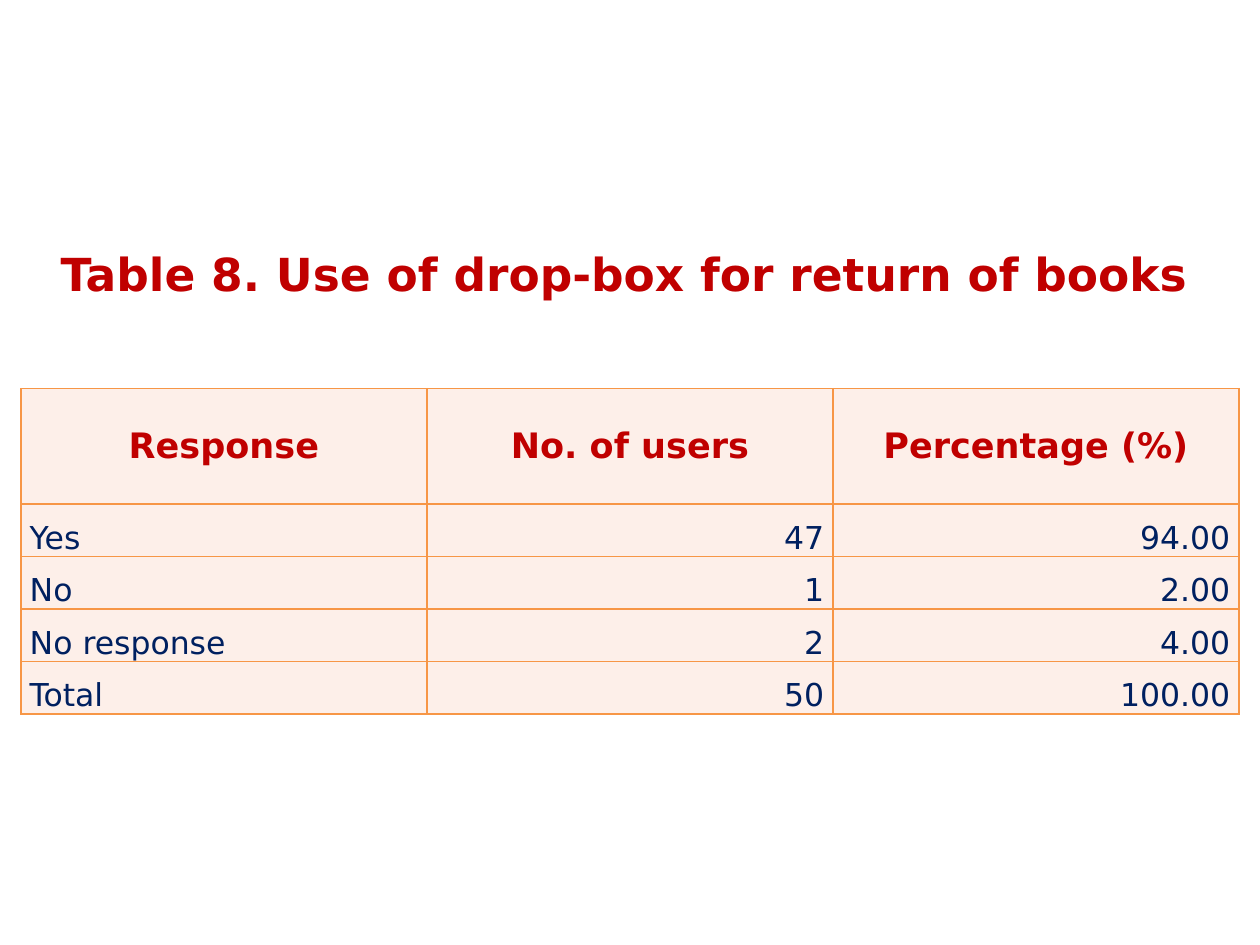
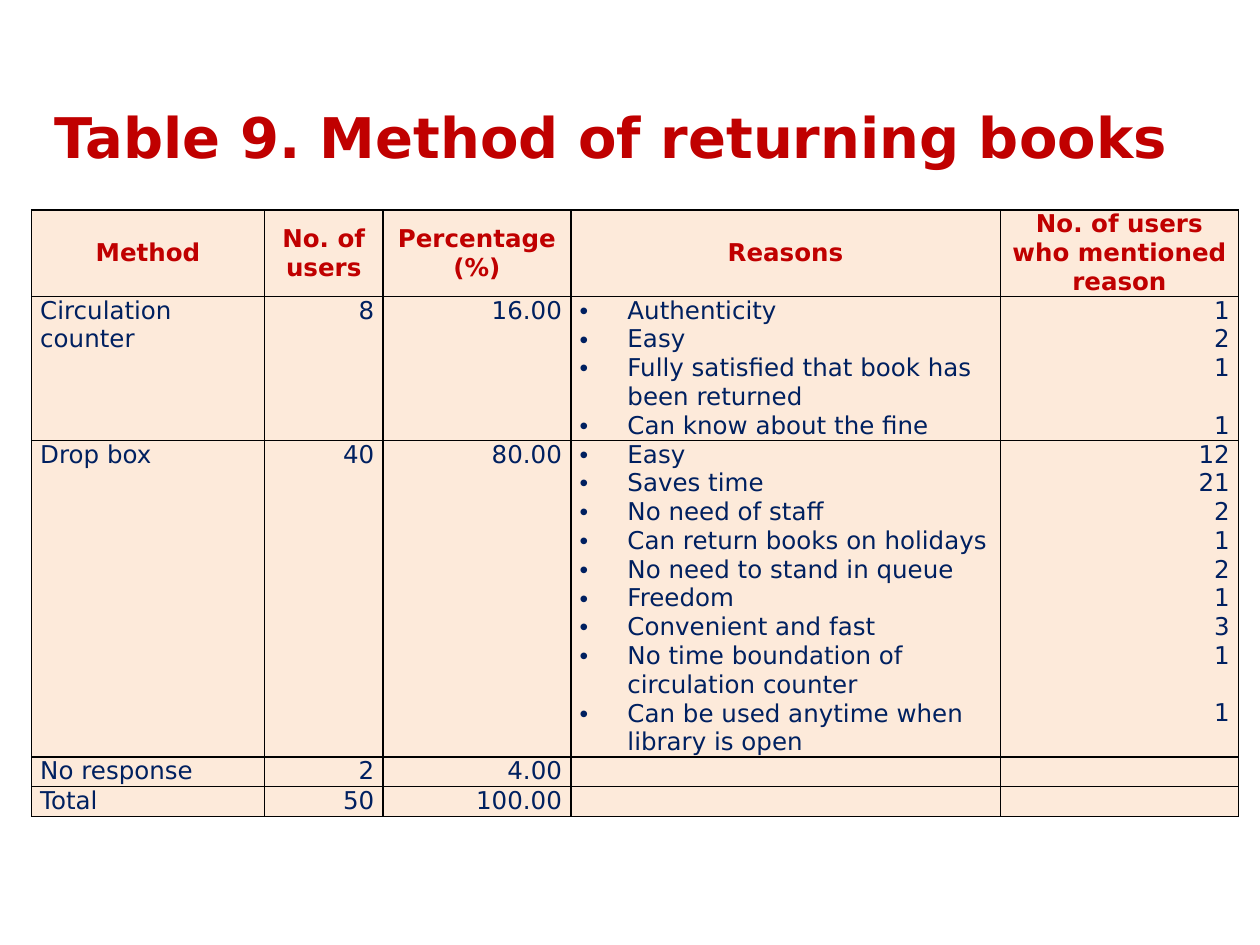
"""Build two slides of survey tables about returning library books."""
import lxml.etree
import pptx
import pptx.dml.color
import pptx.enum.text
import pptx.oxml.ns
import pptx.util

Pt = pptx.util.Pt
qn = pptx.oxml.ns.qn
ALIGN = pptx.enum.text.PP_ALIGN
ANCHOR = pptx.enum.text.MSO_ANCHOR

FONT = "DejaVu Sans"
RED, NAVY = "C00000", "002060"
LINE = 16.4
INDENT = 27.4
WRAP_LENGTH = 30

COUNTER_REASONS = [
    ("Authenticity", 1),
    ("Easy", 2),
    ("Fully satisfied that book has been returned", 1),
    ("Can know about the fine", 1),
]
BOX_REASONS = [
    ("Easy", 12),
    ("Saves time", 21),
    ("No need of staff", 2),
    ("Can return books on holidays", 1),
    ("No need to stand in queue", 2),
    ("Freedom", 1),
    ("Convenient and fast", 3),
    ("No time boundation of circulation counter", 1),
    ("Can be used anytime when library is open", 1),
]

SLIDES = [
    dict(
        title="Table 8. Use of drop-box for return of books",
        title_box=(12, 136.2, 690, 40), title_size=26, title_align=ALIGN.CENTER,
        origin=(12, 222), widths=[232] * 3, heights=[66] + [30] * 4,
        head_size=20, body_size=18, anchor=ANCHOR.BOTTOM,
        fill="FDEFE9", border="F79646",
        head=["Response", "No. of users", "Percentage (%)"],
        rows=[
            ("Yes", "47", "94.00", []),
            ("No", "1", "2.00", []),
            ("No response", "2", "4.00", []),
            ("Total", "50", "100.00", []),
        ],
    ),
    dict(
        title="Table 9. Method of returning books",
        title_box=(24, 55, 678, 46), title_size=32, title_align=ALIGN.LEFT,
        origin=(18, 120), widths=[133.2, 67.7, 107.3, 245.5, 136.1],
        heights=[LINE * n for n in (3, 5, 11, 1, 1)],
        head_size=14, body_size=14, anchor=ANCHOR.TOP,
        fill="FDEADA", border="000000",
        head=["Method", "No. of users", "Percentage (%)", "Reasons",
              "No. of users who mentioned reason"],
        rows=[
            ("Circulation counter", "8", "16.00", COUNTER_REASONS),
            ("Drop box", "40", "80.00", BOX_REASONS),
            ("No response", "2", "4.00", []),
            ("Total", "50", "100.00", []),
        ],
    ),
]


def rgb(value):
    return pptx.dml.color.RGBColor.from_string(value)


def add_text(p, text, size, color, bold, align):
    p.alignment = align
    r = p.add_run()
    r.text = text
    r.font.name, r.font.size, r.font.bold = FONT, Pt(size), bold
    r.font.color.rgb = rgb(color)


def add_bullet(p):
    pPr = p._p.get_or_add_pPr()
    pPr.set("marL", str(Pt(INDENT)))
    pPr.set("indent", str(-Pt(INDENT)))
    lxml.etree.SubElement(pPr, qn("a:buFont"), typeface="Arial")
    lxml.etree.SubElement(pPr, qn("a:buChar"), char="•")


def add_border(cell, color):
    tcPr = cell._tc.get_or_add_tcPr()
    for i, side in enumerate("LRTB"):
        ln = lxml.etree.Element(qn("a:ln" + side), w=str(Pt(1)))
        fill = lxml.etree.SubElement(ln, qn("a:solidFill"))
        lxml.etree.SubElement(fill, qn("a:srgbClr"), val=color)
        tcPr.insert(i, ln)


def fill_body_cell(tf, lines, col, size):
    if not lines:
        lxml.etree.SubElement(tf.paragraphs[0]._p, qn("a:endParaRPr"), sz=str(size * 100))
    wrapped = False
    for i, (text, next_wrapped) in enumerate(lines):
        p = tf.add_paragraph() if i else tf.paragraphs[0]
        if col == 3:
            add_bullet(p)
        if col == 4 and wrapped:
            p.space_before = Pt(LINE)
        add_text(p, text, size, NAVY, False, ALIGN.LEFT if col in (0, 3) else ALIGN.RIGHT)
        wrapped = next_wrapped


def body_cells(row):
    *values, reasons = row
    wraps = [len(reason) > WRAP_LENGTH for reason, _ in reasons]
    return [[(value, False)] for value in values] + [
        [(reason, w) for (reason, _), w in zip(reasons, wraps)],
        [(str(count), w) for (_, count), w in zip(reasons, wraps)],
    ]


def add_title(s, d):
    sp = s.shapes.title
    sp.left, sp.top, sp.width, sp.height = map(Pt, d["title_box"])
    tf = sp.text_frame
    tf.auto_size = pptx.enum.text.MSO_AUTO_SIZE.NONE
    tf.vertical_anchor = ANCHOR.MIDDLE
    add_text(tf.paragraphs[0], d["title"], d["title_size"], RED, True, d["title_align"])


def add_table(s, d):
    widths, heights = d["widths"], d["heights"]
    box = map(Pt, (*d["origin"], sum(widths), sum(heights)))
    table = s.shapes.add_table(len(heights), len(widths), *box).table
    table.first_row = table.horz_banding = False
    for column, width in zip(table.columns, widths):
        column.width = Pt(width)
    for row, height in zip(table.rows, heights):
        row.height = Pt(height)
    for cell in table.iter_cells():
        cell.margin_left = cell.margin_right = Pt(5)
        cell.margin_top = cell.margin_bottom = 0
        cell.vertical_anchor = d["anchor"]
        cell.fill.solid()
        cell.fill.fore_color.rgb = rgb(d["fill"])
        add_border(cell, d["border"])
    for col, text in enumerate(d["head"]):
        cell = table.cell(0, col)
        cell.vertical_anchor = ANCHOR.MIDDLE
        add_text(cell.text_frame.paragraphs[0], text, d["head_size"], RED, True, ALIGN.CENTER)
    for i, row in enumerate(d["rows"], 1):
        for col, lines in enumerate(body_cells(row)[:len(widths)]):
            fill_body_cell(table.cell(i, col).text_frame, lines, col, d["body_size"])


def main():
    prs = pptx.Presentation()
    prs.slide_width, prs.slide_height = Pt(720), Pt(540)
    for d in SLIDES:
        s = prs.slides.add_slide(prs.slide_layouts[5])
        add_table(s, d)
        add_title(s, d)
    prs.save("out.pptx")


if __name__ == "__main__":
    main()
